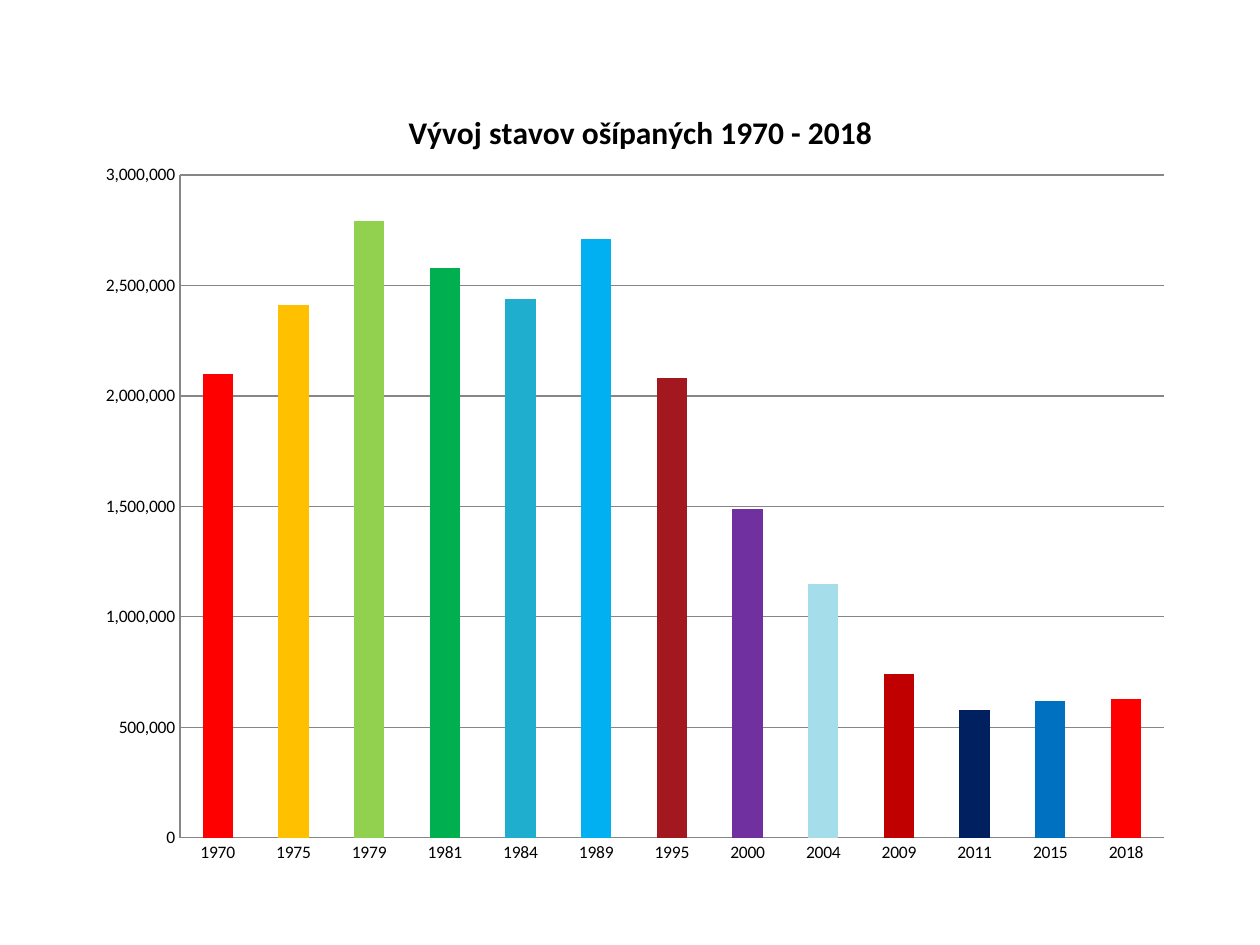
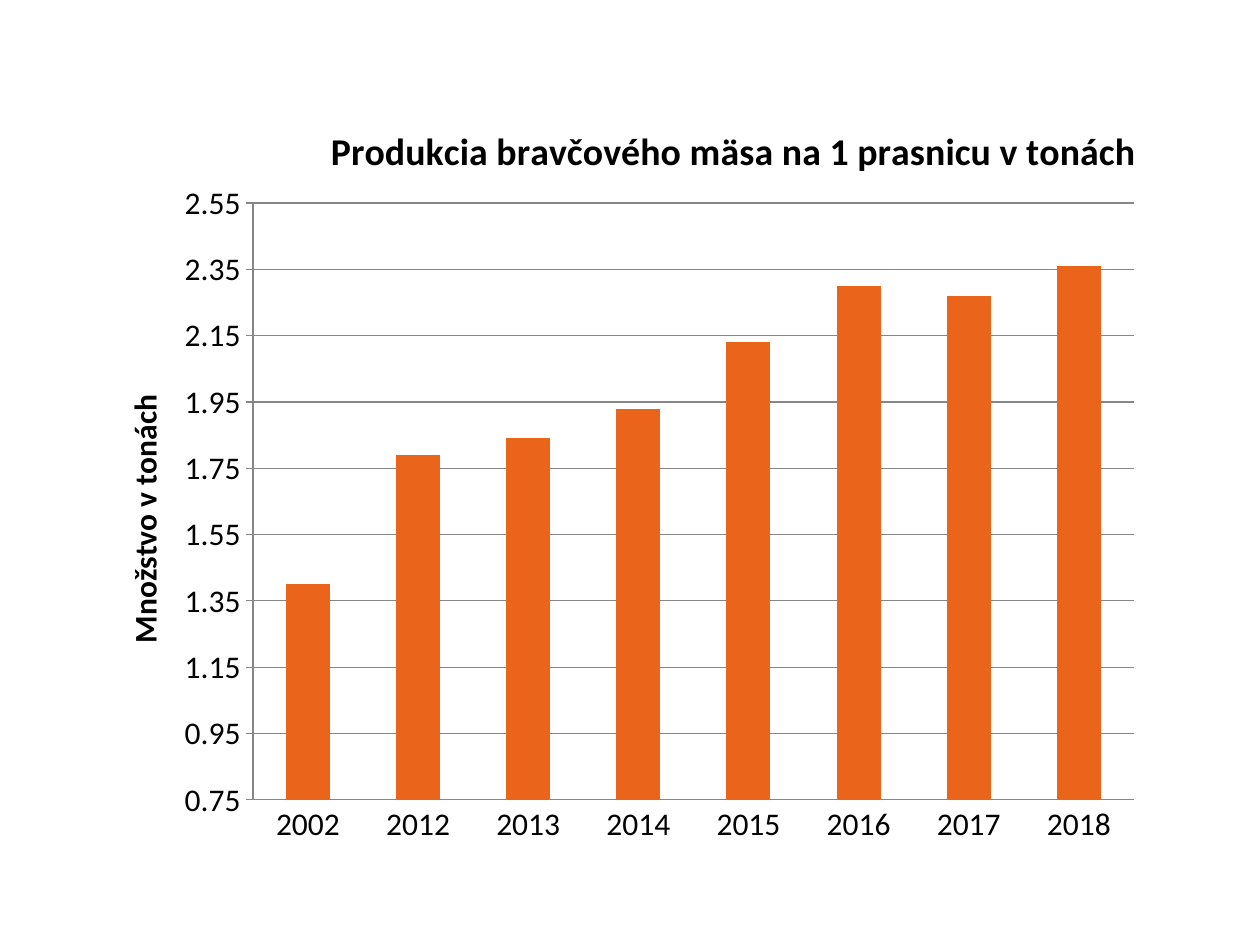
from dataclasses import dataclass

from lxml import etree
from pptx import Presentation
from pptx import util as u
from pptx.chart import data as chart_data
from pptx.dml import color
from pptx.enum import chart as kinds
from pptx.oxml import ns

PX = 914400 / 126
BLANK_LAYOUT = 6


@dataclass(frozen=True)
class Theme:
    font: str = "Calibri"
    ink: str = "000000"
    rule: str = "868686"
    bar: str = "EB641B"
    small: float = 10
    label: float = 18
    heading: float = 21.6


THEME = Theme()

PIG_STOCKS = (
    ("1970", 2100000, "FF0000"),
    ("1975", 2410000, "FFC000"),
    ("1979", 2790000, "92D050"),
    ("1981", 2580000, "00B050"),
    ("1984", 2440000, "1FAECD"),
    ("1989", 2710000, "00B0F0"),
    ("1995", 2080000, "A3171E"),
    ("2000", 1490000, "7030A0"),
    ("2004", 1150000, "A6DDEA"),
    ("2009", 740000, "C00000"),
    ("2011", 580000, "002060"),
    ("2015", 620000, "0070C0"),
    ("2018", 630000, "FF0000"),
)

PORK_PER_SOW = (
    ("2002", 1.4, THEME.bar),
    ("2012", 1.79, THEME.bar),
    ("2013", 1.84, THEME.bar),
    ("2014", 1.93, THEME.bar),
    ("2015", 2.13, THEME.bar),
    ("2016", 2.3, THEME.bar),
    ("2017", 2.27, THEME.bar),
    ("2018", 2.36, THEME.bar),
)


def px(length):
    return u.Emu(round(length * PX))


def rgb(value):
    return color.RGBColor.from_string(value)


def style_font(font, size, bold=False):
    font.name = THEME.font
    font.size = u.Pt(size)
    font.bold = bold
    font.color.rgb = rgb(THEME.ink)


def write_text(frame, text, size, bold=False):
    para = frame.paragraphs[0]
    span = para.add_run()
    span.text = text
    style_font(span.font, size, bold)


def set_layout(parent, index, area, frame, inner=False):
    for old in parent.findall(ns.qn("c:layout")):
        parent.remove(old)
    layout = etree.Element(ns.qn("c:layout"))
    manual = etree.SubElement(layout, ns.qn("c:manualLayout"))
    settings = [("layoutTarget", "inner")] if inner else []
    settings += [("xMode", "edge"), ("yMode", "edge")]
    left, top, width, height = frame
    shares = [(area[0] - left) / width, (area[1] - top) / height]
    if inner:
        shares += [area[2] / width, area[3] / height]
    settings += [(name, f"{share:.4f}") for name, share in zip("xywh", shares)]
    for name, value in settings:
        etree.SubElement(manual, ns.qn(f"c:{name}")).set("val", value)
    parent.insert(index, layout)


def add_title(title, text, corner, frame, size):
    write_text(title.text_frame, text, size, bold=True)
    set_layout(title.element, 1, corner, frame)


def style_axis(axis, size, tick):
    axis.major_tick_mark = tick
    axis.minor_tick_mark = kinds.XL_TICK_MARK.NONE
    axis.format.line.color.rgb = rgb(THEME.rule)
    axis.format.line.width = u.Pt(0.75)
    style_font(axis.tick_labels.font, size)


def scale_axis(axis, low, high, step, number_format):
    axis.minimum_scale = low
    axis.maximum_scale = high
    axis.major_unit = step
    axis.has_major_gridlines = True
    axis.major_gridlines.format.line.color.rgb = rgb(THEME.rule)
    axis.major_gridlines.format.line.width = u.Pt(0.75)
    axis.tick_labels.number_format = number_format
    axis.tick_labels.number_format_is_linked = False


def paint_bars(plot, rows):
    plot.gap_width = 150
    plot.vary_by_categories = False
    series = plot.series[0]
    series.invert_if_negative = False
    series.format.fill.solid()
    series.format.fill.fore_color.rgb = rgb(THEME.bar)
    for index, (_, _, fill_color) in enumerate(rows):
        if fill_color != THEME.bar:
            fill = series.points[index].format.fill
            fill.solid()
            fill.fore_color.rgb = rgb(fill_color)


def add_column_chart(page, rows, frame, plot_area, size, scale, tick):
    table = chart_data.CategoryChartData()
    table.categories = [year for year, _, _ in rows]
    table.add_series("Series 1", [value for _, value, _ in rows])
    chart = page.shapes.add_chart(
        kinds.XL_CHART_TYPE.COLUMN_CLUSTERED, *map(px, frame), table
    ).chart
    style_font(chart.font, size)
    chart.has_legend = False
    style_axis(chart.category_axis, size, kinds.XL_TICK_MARK.NONE)
    style_axis(chart.value_axis, size, tick)
    scale_axis(chart.value_axis, *scale)
    paint_bars(chart.plots[0], rows)
    plot_element = chart.element.find(f".//{ns.qn('c:plotArea')}")
    set_layout(plot_element, 0, plot_area, frame, inner=True)
    return chart


def add_stocks_page(deck):
    page = deck.slides.add_slide(deck.slide_layouts[BLANK_LAYOUT])
    frame = (84, 76, 1101, 804)
    chart = add_column_chart(
        page, PIG_STOCKS, frame, (180, 175, 984, 663), THEME.small,
        (0, 3000000, 500000, "#,##0"), kinds.XL_TICK_MARK.NONE,
    )
    add_title(chart.chart_title, "Vývoj stavov ošípaných 1970 - 2018",
              (403, 105), frame, THEME.label)


def add_pork_page(deck):
    page = deck.slides.add_slide(deck.slide_layouts[BLANK_LAYOUT])
    frame = (84, 76, 1071, 784)
    chart = add_column_chart(
        page, PORK_PER_SOW, frame, (253, 203, 881, 597), THEME.label,
        (0.75, 2.55, 0.2, "0.00"), kinds.XL_TICK_MARK.OUTSIDE,
    )
    add_title(chart.chart_title, "Produkcia bravčového mäsa na 1 prasnicu v tonách",
              (324, 117), frame, THEME.heading)
    axis_title = chart.value_axis.axis_title
    add_title(axis_title, "Množstvo v tonách", (117, 389), frame, THEME.label)
    body = axis_title.text_frame._txBody.find(ns.qn("a:bodyPr"))
    body.set("rot", "-5400000")
    body.set("vert", "horz")


def main():
    deck = Presentation()
    deck.slide_width = px(1260)
    deck.slide_height = px(945)
    add_stocks_page(deck)
    add_pork_page(deck)
    deck.save("out.pptx")


if __name__ == "__main__":
    main()
